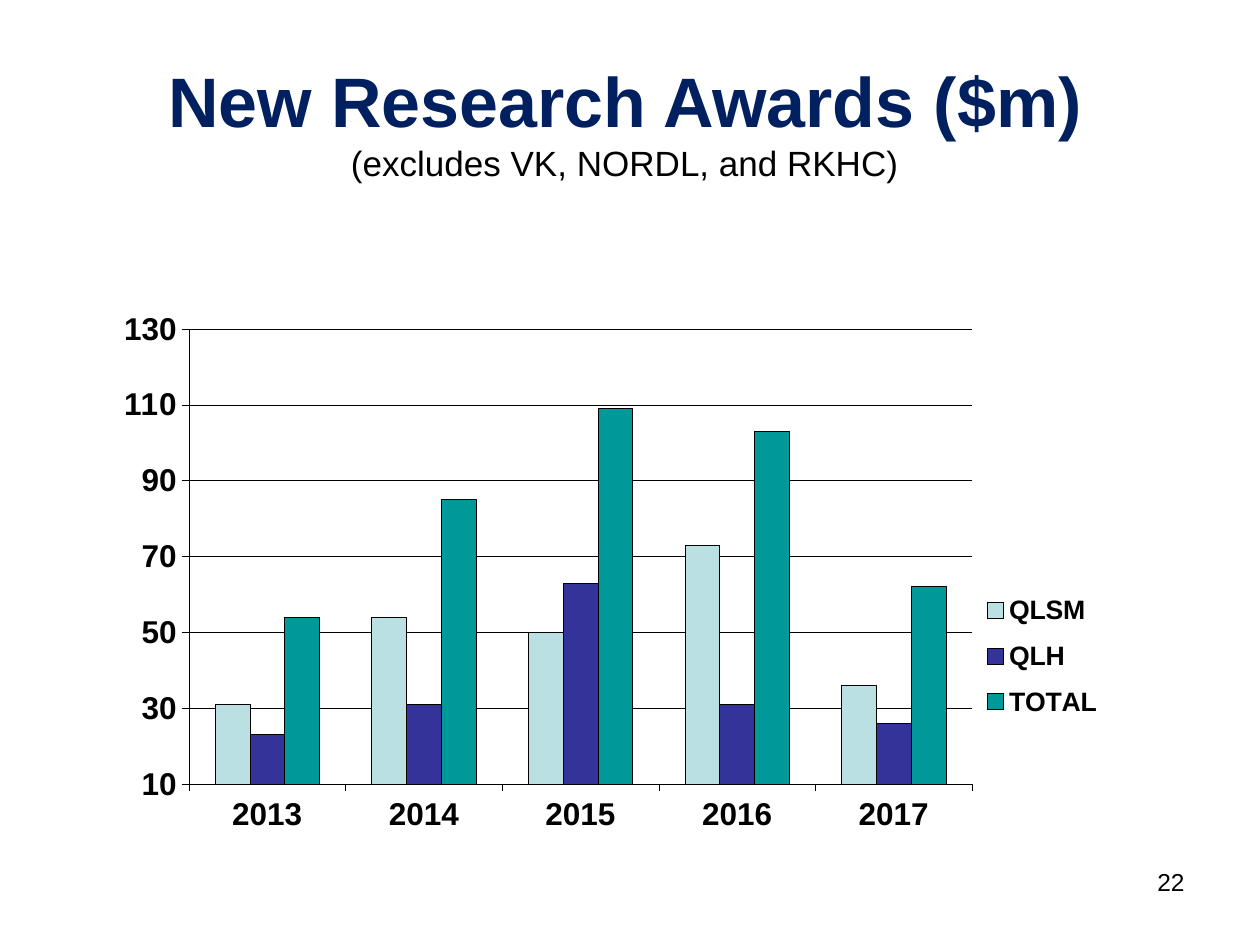
from lxml import etree
from pptx import Presentation
from pptx.chart.data import CategoryChartData
from pptx.dml.color import RGBColor
from pptx.enum.chart import (XL_CHART_TYPE, XL_LEGEND_POSITION,
                             XL_TICK_LABEL_POSITION, XL_TICK_MARK)
from pptx.enum.text import MSO_ANCHOR, PP_ALIGN
from pptx.oxml.ns import qn
from pptx.util import Pt

COLUMN = XL_CHART_TYPE.COLUMN_CLUSTERED
RIGHT_KEY = XL_LEGEND_POSITION.RIGHT
LOW = XL_TICK_LABEL_POSITION.LOW
OUTSIDE = XL_TICK_MARK.OUTSIDE
TOP, MIDDLE = MSO_ANCHOR.TOP, MSO_ANCHOR.MIDDLE
CENTER, RIGHT = PP_ALIGN.CENTER, PP_ALIGN.RIGHT

BLACK = RGBColor(0x00, 0x00, 0x00)
NAVY = RGBColor(0x00, 0x20, 0x60)
PALE = RGBColor(0xBB, 0xE0, 0xE3)
INDIGO = RGBColor(0x33, 0x33, 0x99)
TEAL = RGBColor(0x00, 0x99, 0x99)

YEARS = ["2013", "2014", "2015", "2016", "2017"]
AWARDS = [
    ("QLSM", [31, 54, 50, 73, 36], PALE),
    ("QLH", [23, 31, 63, 31, 26], INDIGO),
    ("TOTAL", [54, 85, 109, 103, 62], TEAL),
]


def style(font, size, color=BLACK, bold=False, name="Arial"):
    font.name, font.size, font.bold = name, Pt(size), bold
    font.color.rgb = color


def place(owner, box, size, inner=False):
    """Lay out a plot area or legend at box, in points within the chart."""
    layout = owner.find(qn("c:layout"))
    if layout is None:
        layout = etree.Element(qn("c:layout"))
        owner.insert(0 if inner else 1, layout)
    for old in list(layout):
        layout.remove(old)
    manual = etree.SubElement(layout, qn("c:manualLayout"))
    marks = [("layoutTarget", "inner")] if inner else []
    marks += [("xMode", "edge"), ("yMode", "edge")]
    marks += [(tag, part / full) for tag, part, full in zip("xywh", box, size * 2)]
    for tag, value in marks:
        etree.SubElement(manual, qn("c:" + tag)).set("val", str(value))


class Page:
    def __init__(self, slide, line=0.25):
        self.slide = slide
        self.line = line

    def text(self, box, lines, align=CENTER, anchor=TOP):
        """Add a text box; each line is its words and a dict of font format."""
        frame = self.slide.shapes.add_textbox(*map(Pt, box)).text_frame
        frame.word_wrap = True
        frame.vertical_anchor = anchor
        para = frame.paragraphs[0]
        para.alignment = align
        for i, (words, form) in enumerate(lines):
            if i:
                para.add_line_break()
            run = para.add_run()
            run.text = words
            style(run.font, **form)

    def rule(self, line):
        line.color.rgb = BLACK
        line.width = Pt(self.line)

    def chart(self, box, years, rows):
        data = CategoryChartData()
        data.categories = years
        for name, values, _ in rows:
            data.add_series(name, values)
        chart = self.slide.shapes.add_chart(COLUMN, *map(Pt, box), data).chart
        chart.has_title = False
        style(chart.font, 18, bold=True)

        plot = chart.plots[0]
        plot.gap_width, plot.overlap = 150, 0
        plot.vary_by_categories = False
        for bars, (_, _, color) in zip(plot.series, rows):
            bars.format.fill.solid()
            bars.format.fill.fore_color.rgb = color
            bars.invert_if_negative = False
            self.rule(bars.format.line)

        for axis in (chart.category_axis, chart.value_axis):
            axis.major_tick_mark = OUTSIDE
            style(axis.tick_labels.font, 18, bold=True)
            self.rule(axis.format.line)
        chart.category_axis.tick_label_position = LOW
        scale = chart.value_axis
        scale.minimum_scale, scale.maximum_scale = 10, 130
        scale.major_unit = 20
        self.rule(scale.major_gridlines.format.line)

        chart.has_legend = True
        key = chart.legend
        key.position = RIGHT_KEY
        key.include_in_layout = False
        style(key.font, 15.2, bold=True)
        size = box[2:]
        area = plot._element.getparent()
        place(area, (44, 18, 447.5, 260), size, inner=True)
        place(key._element, (493.5, 161, 76, 88), size)


def main():
    deck = Presentation()
    deck.slide_width, deck.slide_height = Pt(720), Pt(540)
    page = Page(deck.slides.add_slide(deck.slide_layouts[6]))
    page.text((75, 24, 564, 90), [
        ("New Research Awards ($m)", dict(size=40, color=NAVY, bold=True)),
        ("(excludes VK, NORDL, and RKHC)", dict(size=20)),
    ], anchor=MIDDLE)
    page.chart((64, 170, 586, 322.5), YEARS, AWARDS)
    page.text((516, 492, 168, 37.5), [("22", dict(size=14))], align=RIGHT)
    deck.save("out.pptx")


if __name__ == "__main__":
    main()
